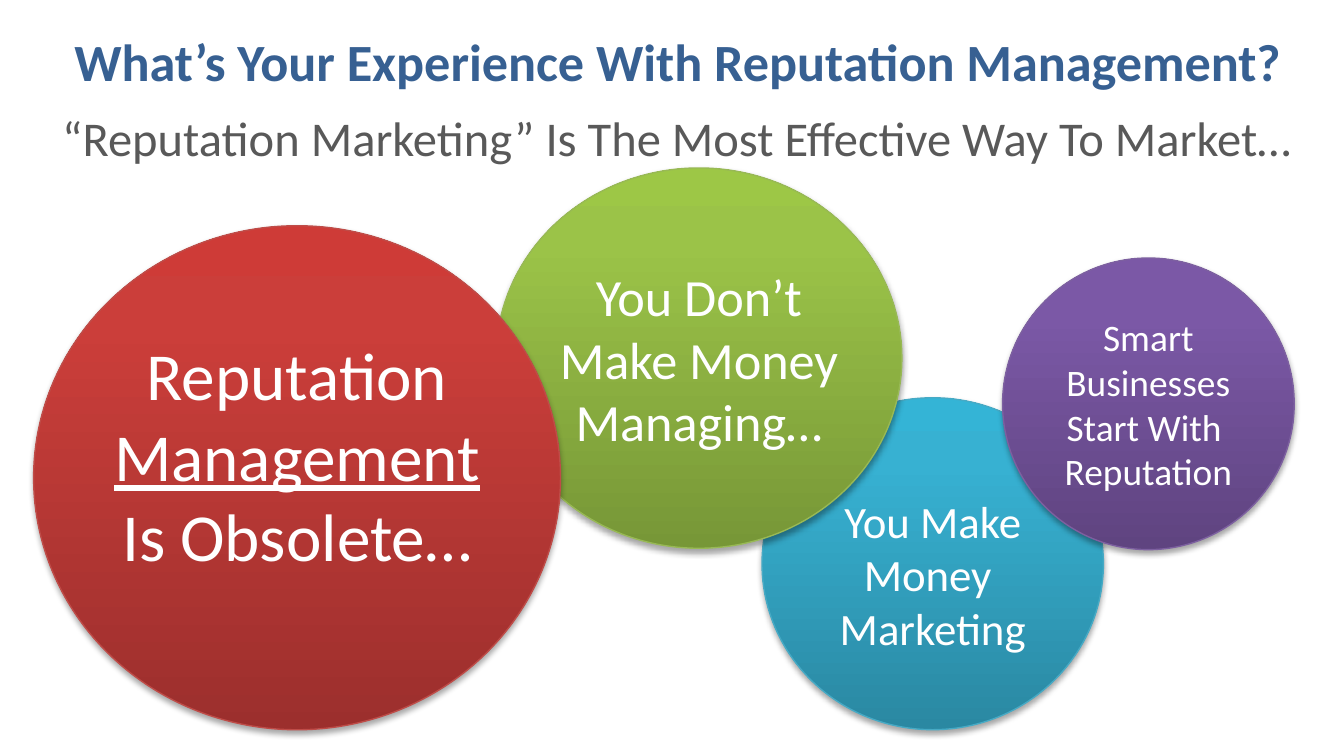
"""Build a slide on reputation marketing with four overlapping circles."""
from lxml import etree
from pptx import Presentation
from pptx.dml.color import RGBColor
from pptx.enum import shapes, text
from pptx.oxml import parse_xml
from pptx.oxml.ns import nsdecls
from pptx.util import Pt
from copy import deepcopy

THEME = {
    "font": "Calibri",
    "white": "FFFFFF",
    "red": (("9C2F2D", "CB3E3A", "CE3B37"), "BF4C48"),
    "green": (("779737", "9BC348", "9DC746"), "98B955"),
    "blue": (("2A88A2", "37B1D2", "34B4D6"), "46AAC5"),
    "purple": (("5F4480", "7B58A6", "7C57A8"), "7D60A0"),
    "stops": (0, 0.8, 1),
    "title": (28, "376092", True),
    "subtitle": (26, "595959", False),
}

HEADINGS = [
    ("What’s Your Experience With Reputation Management?", "title", -7.2),
    ("“Reputation Marketing” Is The Most Effective Way To Market…", "subtitle", 33.84),
]
HEADING_LEFT, HEADING_WIDTH, HEADING_HEIGHT = -90, 905.76, 79.2

MIDDLE, BOTTOM = text.MSO_ANCHOR.MIDDLE, text.MSO_ANCHOR.BOTTOM
CIRCLES = [
    ("You Make\vMoney \vMarketing", "blue", 24,
     (408.24, 213.12, 182.88, 177.84), (7.2, 14.4, 7.2, 3.6), MIDDLE),
    ("You Don’t Make Money\vManaging…", "green", 28,
     (265.68, 90, 217.44, 203.76), (0, 0, 0, 0), MIDDLE),
    ("Smart Businesses\vStart With \vReputation", "purple", 20,
     (537.12, 138.24, 156.24, 156.24), (7.2, 3.6, 7.2, 3.6), MIDDLE),
    ("Reputation\vManagement\vIs Obsolete…", "red", 36,
     (18, 120.96, 282.24, 270), (0, 0, 0, 43.2), BOTTOM),
]
UNDERLINED = "Management"

SHADOW = (
    f'<a:outerShdw {nsdecls("a")} blurRad="{Pt(3.1)}" dist="{Pt(1.8)}" dir="5400000" '
    'rotWithShape="0"><a:srgbClr val="000000"><a:alpha val="35000"/></a:srgbClr>'
    '</a:outerShdw>'
)


def rgb(value):
    return RGBColor.from_string(value)


def write(sp, words, size, color, bold=False, anchor=MIDDLE, insets=(7.2, 3.6, 7.2, 3.6)):
    tf = sp.text_frame
    tf.word_wrap = True
    tf.vertical_anchor = anchor
    tf.margin_left, tf.margin_top, tf.margin_right, tf.margin_bottom = map(Pt, insets)
    p = tf.paragraphs[0]
    p.text = words
    p.alignment = text.PP_ALIGN.CENTER
    for r in p.runs:
        r.font.name = THEME["font"]
        r.font.size = Pt(size)
        r.font.bold = bold
        r.font.color.rgb = rgb(color)
        if r.text == UNDERLINED:
            r.font.underline = True


def shade(sp, colors, outline):
    sp.fill.gradient()
    sp.fill.gradient_angle = 90
    first = sp._element.spPr.find(".//{*}gs")
    first.addnext(deepcopy(first))
    for stop, position, color in zip(sp.fill.gradient_stops, THEME["stops"], colors):
        stop.position = position
        stop.color.rgb = rgb(color)
    sp.line.color.rgb = rgb(outline)
    sp.line.width = Pt(0.75)
    sp.shadow.inherit = False
    sp._element.spPr.find("{*}effectLst").append(parse_xml(SHADOW))


def main():
    prs = Presentation()
    prs.slide_width, prs.slide_height = Pt(720), Pt(405)
    s = prs.slides.add_slide(prs.slide_layouts[6])
    for words, color, size, place, insets, anchor in CIRCLES:
        sp = s.shapes.add_shape(shapes.MSO_SHAPE.OVAL, *map(Pt, place))
        shade(sp, *THEME[color])
        write(sp, words, size, THEME["white"], anchor=anchor, insets=insets)
    for words, style, top in HEADINGS:
        place = (HEADING_LEFT, top, HEADING_WIDTH, HEADING_HEIGHT)
        write(s.shapes.add_textbox(*map(Pt, place)), words, *THEME[style])
    prs.save("out.pptx")


if __name__ == "__main__":
    main()
